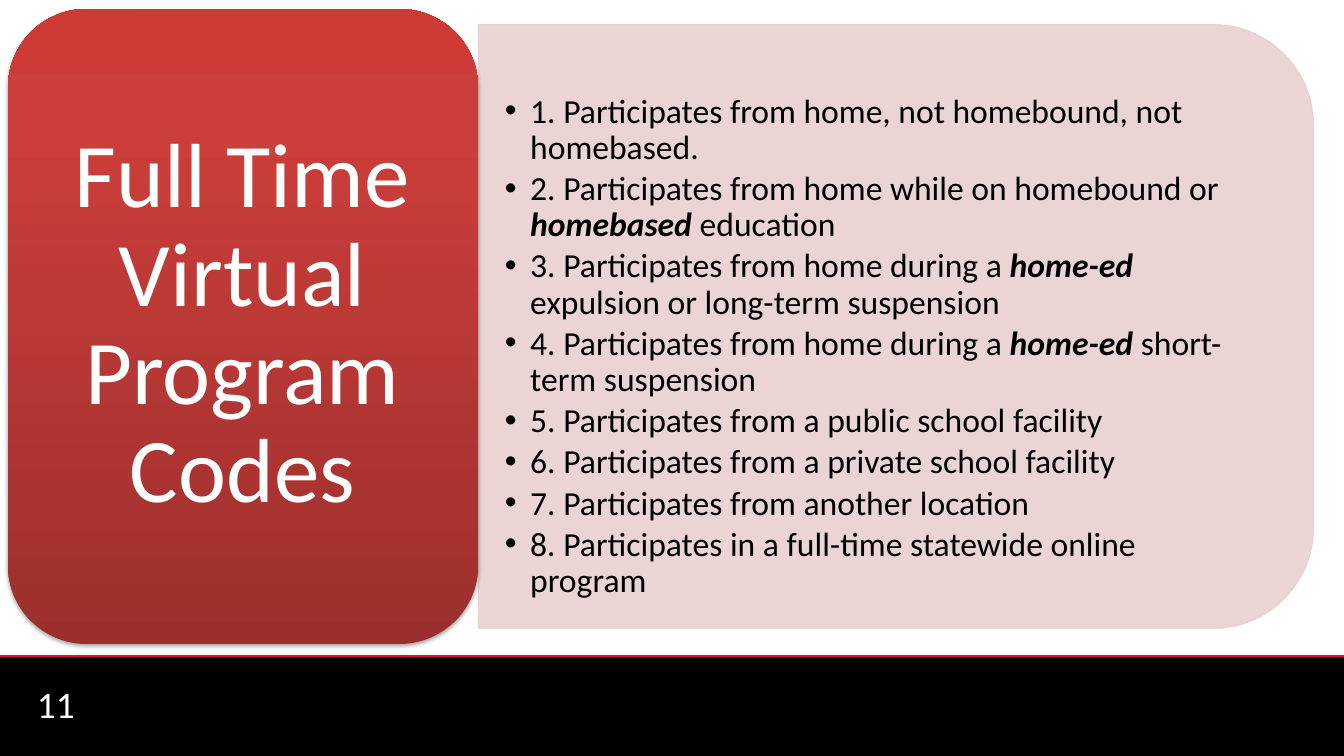
from copy import deepcopy

from lxml import etree
from pptx import Presentation
from pptx.dml.color import RGBColor
from pptx.enum.shapes import MSO_CONNECTOR, MSO_SHAPE
from pptx.enum.text import MSO_ANCHOR, MSO_AUTO_SIZE, PP_ALIGN
from pptx.oxml.ns import qn
from pptx.util import Emu, Pt

PX = 914400 / 100.8
FONT = "Calibri"
COLORS = {
    "white": "FFFFFF",
    "black": "000000",
    "rule": "E20D38",
    "panel": "E8D0D0",
    "card_bottom": "9C2F2D",
    "card_middle": "CB3E3A",
    "card_top": "CE3B37",
}
RGB = {name: RGBColor.from_string(value) for name, value in COLORS.items()}
CODES = [
    "1. Participates from home, not homebound, not homebased.",
    "2. Participates from home while on homebound or *homebased* education",
    "3. Participates from home during a *home-ed* expulsion or long-term suspension",
    "4. Participates from home during a *home-ed *short-term suspension",
    "5. Participates from a public school facility",
    "6. Participates from a private school facility",
    "7. Participates from another location",
    "8. Participates in a full-time statewide online program",
]


def px(*lengths):
    return [Emu(round(length * PX)) for length in lengths]


def add_shadow(shape, distance, opacity):
    """Cast a soft black shadow straight down; distance in points, opacity in percent."""
    effects = etree.SubElement(shape._element.spPr, qn("a:effectLst"))
    shadow = etree.SubElement(effects, qn("a:outerShdw"), blurRad=str(Pt(3.1)),
                              dist=str(Pt(distance)), dir="5400000", rotWithShape="0")
    color = etree.SubElement(shadow, qn("a:srgbClr"), val=COLORS["black"])
    etree.SubElement(color, qn("a:alpha"), val=str(opacity * 1000))


prs = Presentation()
prs.slide_width, prs.slide_height = px(1344, 756)
s = prs.slides.add_slide(prs.slide_layouts[1])
title, body = s.placeholders

# Footer
footer = s.shapes.add_shape(MSO_SHAPE.RECTANGLE, *px(0, 656, 1344, 100))
footer.fill.solid()
footer.fill.fore_color.rgb = RGB["black"]
footer.line.fill.background()
add_shadow(footer, 1.8, 35)

rule = s.shapes.add_connector(MSO_CONNECTOR.STRAIGHT, *px(0, 656, 1344, 656))
rule.line.color.rgb = RGB["rule"]
rule.line.width = Pt(2)
add_shadow(rule, 1.6, 38)

number = s.shapes.add_textbox(*px(24, 686, 314, 41))

# Panel behind the list, turned so that its round corners face right
panel = s.shapes.add_shape(MSO_SHAPE.ROUND_2_SAME_RECTANGLE, *px(594, -91, 604, 835))
panel.rotation = 90
panel.shadow.inherit = False
panel.fill.solid()
panel.fill.fore_color.rgb = RGB["panel"]
panel.line.color.rgb = RGB["panel"]
panel.line.width = Pt(0.75)
for color in panel._element.spPr.iter(qn("a:srgbClr")):
    etree.SubElement(color, qn("a:alpha"), val="90000")

# Card behind the title
card = s.shapes.add_shape(MSO_SHAPE.ROUNDED_RECTANGLE, *px(8, 9, 470, 635))
card.fill.gradient()
card.fill.gradient_angle = 90
bottom, top = card.fill.gradient_stops
bottom.color.rgb, bottom.position = RGB["card_bottom"], 0
top.color.rgb, top.position = RGB["card_top"], 1
stops = card._element.spPr.find(".//" + qn("a:gsLst"))
middle = deepcopy(stops[1])
middle.set("pos", "80000")
middle[0].set("val", COLORS["card_middle"])
stops.insert(1, middle)
card.line.fill.background()
add_shadow(card, 1.8, 35)

# Placeholders go in front of the shapes
for shape, box, insets, anchor in (
    (body, (478, 54, 805, 544), (27, 40, 27, 14), MSO_ANCHOR.TOP),
    (title, (31, 31, 423, 590), (27, 14, 27, 14), MSO_ANCHOR.MIDDLE),
    (number, (24, 686, 314, 41), (13, 7, 13, 7), MSO_ANCHOR.MIDDLE),
):
    s.shapes.element.append(shape._element)
    shape.left, shape.top, shape.width, shape.height = px(*box)
    tf = shape.text_frame
    tf.word_wrap = True
    tf.auto_size = MSO_AUTO_SIZE.NONE
    tf.vertical_anchor = anchor
    tf.margin_left, tf.margin_top, tf.margin_right, tf.margin_bottom = px(*insets)

for shape, text, size, align in (
    (title, "Full Time Virtual Program Codes", 65, PP_ALIGN.CENTER),
    (number, "11", 26.7, PP_ALIGN.LEFT),
):
    p = shape.text_frame.paragraphs[0]
    p.add_run().text = text
    p.alignment = align
    p.line_spacing = 0.9
    p.font.name, p.font.size = FONT, Pt(size)
    p.font.color.rgb = RGB["white"]

tf = body.text_frame
for i, code in enumerate(CODES):
    p = tf.add_paragraph() if i else tf.paragraphs[0]
    pPr = p._p.get_or_add_pPr()
    pPr.set("marL", str(Pt(18)))
    pPr.set("indent", str(Pt(-18)))
    p.line_spacing = 0.9
    p.space_before, p.space_after = Pt(0), Pt(3.5)
    p.font.name, p.font.size = FONT, Pt(24)
    p.font.color.rgb = RGB["black"]
    for j, part in enumerate(code.split("*")):
        r = p.add_run()
        r.text = part
        if j % 2:
            r.font.bold = r.font.italic = True

prs.save("out.pptx")
